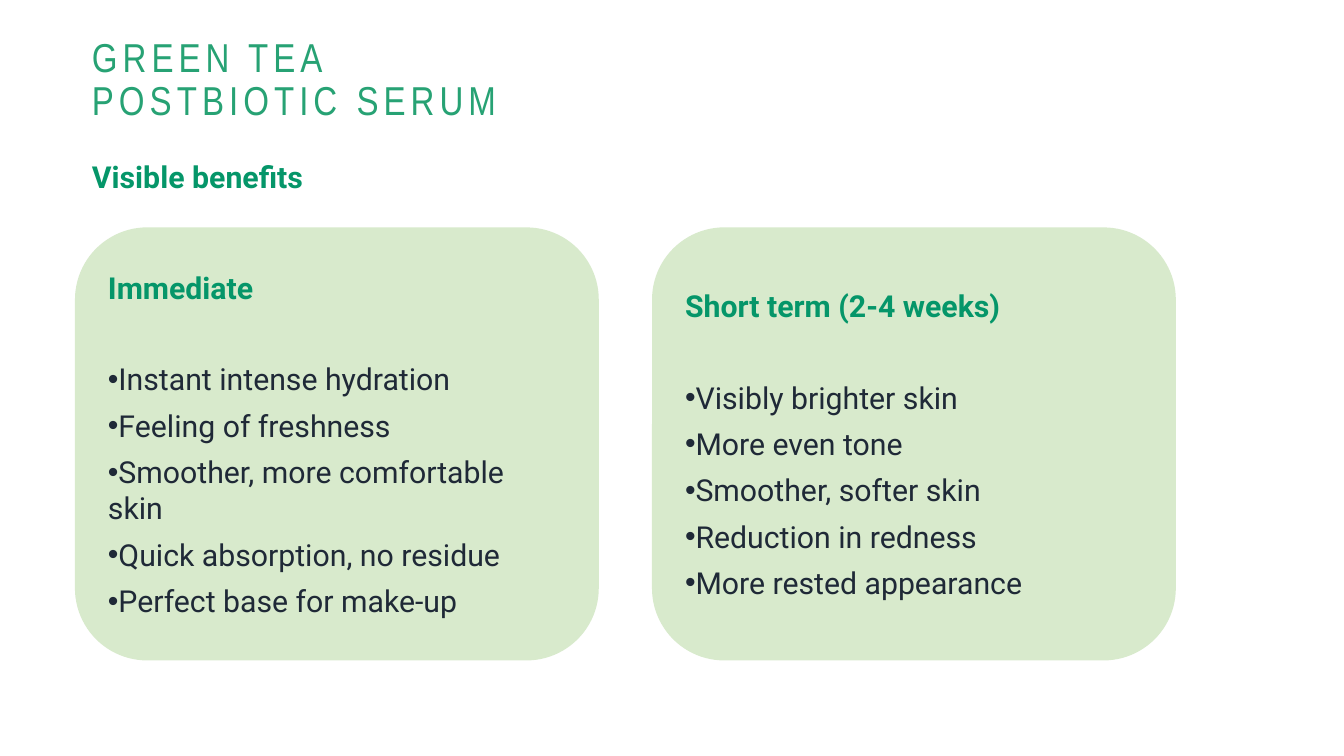
from pptx import Presentation
from pptx.dml.color import RGBColor
from pptx.enum.shapes import MSO_SHAPE
from pptx.enum.text import MSO_ANCHOR, MSO_AUTO_SIZE, PP_ALIGN
from pptx.oxml.ns import qn
from pptx.util import Inches, Pt
from lxml.etree import SubElement

SLIDE_WIDTH, SLIDE_HEIGHT = 11.11, 6.25
MARGIN = 0.76
CARD_LEFT, CARD_TOP = 0.62, 1.88
CARD_WIDTH, CARD_HEIGHT = 4.33, 3.58
CARD_PITCH = 4.77
GREEN, TITLE_GREEN, PALE_GREEN, INK = "059669", "27A274", "D8EACC", "1F2937"

CARDS = [
    ("Immediate", [
        "Instant intense hydration",
        "Feeling of freshness",
        "Smoother, more comfortable skin",
        "Quick absorption, no residue",
        "Perfect base for make-up",
    ]),
    ("Short term (2-4 weeks)", [
        "Visibly brighter skin",
        "More even tone",
        "Smoother, softer skin",
        "Reduction in redness",
        "More rested appearance",
    ]),
]


def color(value):
    return RGBColor.from_string(value)


def style(paragraph, size, name, value, bold=False):
    paragraph.alignment = PP_ALIGN.LEFT
    font = paragraph.font
    font.size, font.name, font.bold = Pt(size), name, bold
    font.color.rgb = color(value)


def clear_insets(frame):
    frame.word_wrap = True
    frame.margin_left = frame.margin_right = 0
    frame.margin_top = frame.margin_bottom = 0


def add_bullet(paragraph):
    properties = paragraph._p.get_or_add_pPr()
    properties.set("marL", "0")
    properties.set("indent", "0")
    SubElement(properties, qn("a:buFont"), typeface="Arial")
    SubElement(properties, qn("a:buChar"), char="•")


def place_title(slide, left, top, width, height):
    title = slide.shapes.title
    title.left, title.top = Inches(left), Inches(top)
    title.width, title.height = Inches(width), Inches(height)
    frame = title.text_frame
    clear_insets(frame)
    frame.auto_size = MSO_AUTO_SIZE.NONE
    frame.vertical_anchor = MSO_ANCHOR.MIDDLE
    frame.text = "GREEN TEA\vPOSTBIOTIC SERUM"
    paragraph = frame.paragraphs[0]
    paragraph.line_spacing = 0.9
    style(paragraph, 24, "Arial Narrow", TITLE_GREEN)
    for run in paragraph.runs:
        run._r.get_or_add_rPr().set("spc", "300")


def add_subtitle(slide, left, top, width, height):
    box = slide.shapes.add_textbox(
        Inches(left), Inches(top), Inches(width), Inches(height))
    frame = box.text_frame
    clear_insets(frame)
    frame.text = "Visible benefits"
    paragraph = frame.paragraphs[0]
    paragraph.line_spacing = 1.07
    style(paragraph, 18, "Roboto", GREEN, bold=True)


def add_card(slide, left, top, width, height, heading, benefits):
    card = slide.shapes.add_shape(
        MSO_SHAPE.ROUNDED_RECTANGLE,
        Inches(left), Inches(top), Inches(width), Inches(height))
    card.shadow.inherit = False
    card.fill.solid()
    card.fill.fore_color.rgb = color(PALE_GREEN)
    card.line.fill.background()
    frame = card.text_frame
    frame.word_wrap = True
    frame.vertical_anchor = MSO_ANCHOR.MIDDLE

    # Heading, set one line apart from the list
    frame.text = heading
    paragraph = frame.paragraphs[0]
    paragraph.space_after = Pt(33)
    style(paragraph, 18, "Roboto", GREEN, bold=True)

    # Benefits
    for benefit in benefits:
        paragraph = frame.add_paragraph()
        paragraph.text = benefit
        paragraph.space_after = Pt(6)
        add_bullet(paragraph)
        style(paragraph, 18, "Roboto", INK)


def main():
    presentation = Presentation()
    presentation.slide_width = Inches(SLIDE_WIDTH)
    presentation.slide_height = Inches(SLIDE_HEIGHT)
    slide = presentation.slides.add_slide(presentation.slide_layouts[5])

    place_title(slide, MARGIN, 0.31, 4.09, 0.72)
    add_subtitle(slide, MARGIN, 1.29, 8.88, 0.41)
    for column, (heading, benefits) in enumerate(CARDS):
        add_card(slide, CARD_LEFT + column * CARD_PITCH, CARD_TOP,
                 CARD_WIDTH, CARD_HEIGHT, heading, benefits)
    presentation.save("out.pptx")


if __name__ == "__main__":
    main()
